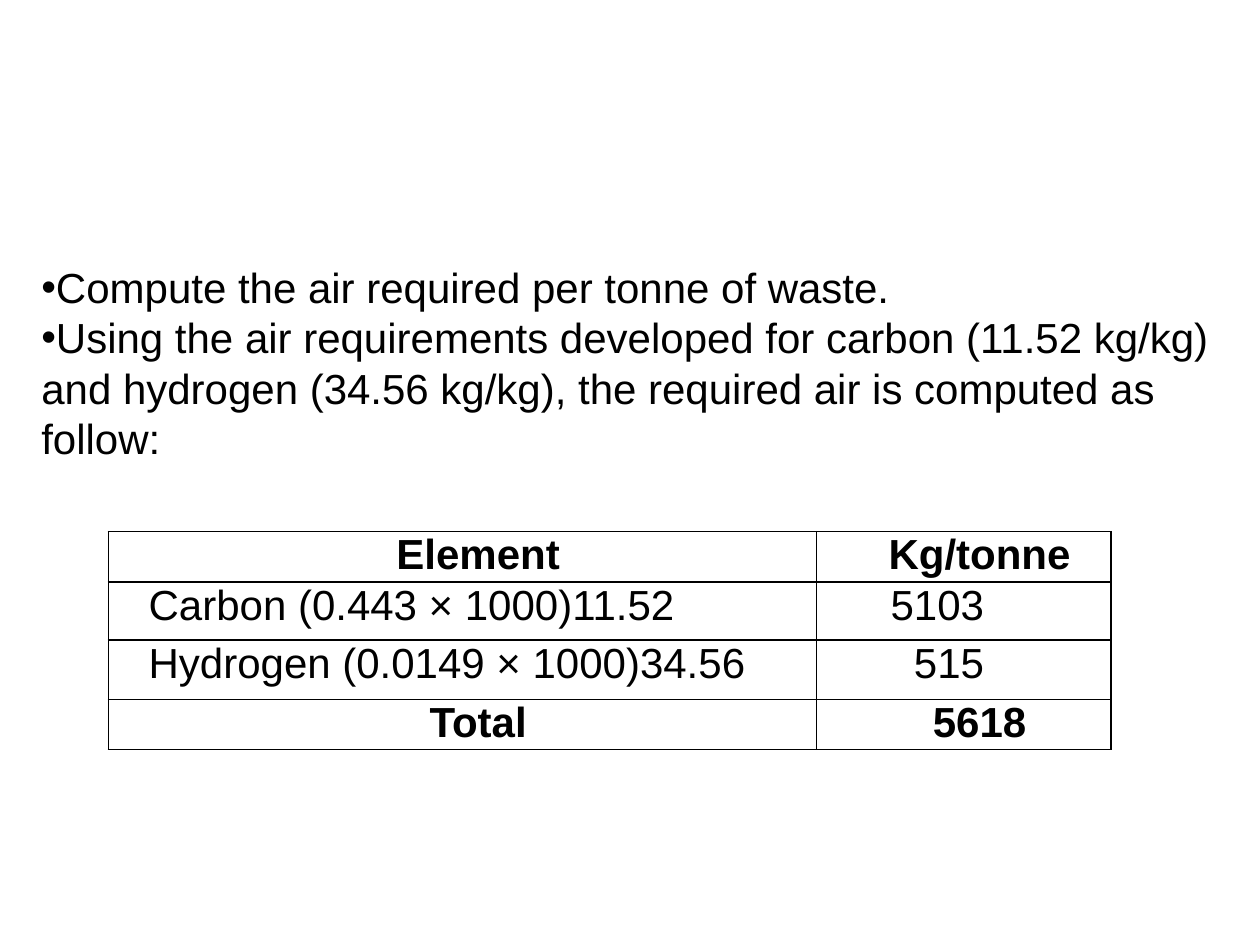
from lxml.etree import SubElement
from pptx import Presentation
from pptx.dml.color import RGBColor
from pptx.enum.text import MSO_ANCHOR, PP_ALIGN
from pptx.oxml.ns import qn
from pptx.util import Inches, Pt

COLORS = {"ink": "000000", "paper": "FFFFFF"}


def write(p, text, size=24, bold=False, align=PP_ALIGN.LEFT, indent=(0, 0), bullet=None):
    p.alignment = align
    pPr = p._p.get_or_add_pPr()
    pPr.set("marL", str(Inches(indent[0])))
    pPr.set("indent", str(Inches(indent[1])))
    if bullet:
        SubElement(pPr, qn("a:buFont"), typeface="Arial")
        SubElement(pPr, qn("a:buChar"), char=bullet)
    r = p.add_run()
    r.text = text
    r.font.name, r.font.size, r.font.bold = "Arial", Pt(size), bold
    r.font.color.rgb = RGBColor.from_string(COLORS["ink"])


class Slide:
    """Hold the style and the current slide; places are shares of its size."""

    def __init__(self, prs):
        self.w, self.h = prs.slide_width, prs.slide_height
        self.s = prs.slides.add_slide(prs.slide_layouts[6])
        fill = self.s.background.fill
        fill.solid()
        fill.fore_color.rgb = RGBColor.from_string(COLORS["paper"])

    def box(self, x, y, w, h):
        return int(x * self.w), int(y * self.h), int(w * self.w), int(h * self.h)

    def text(self, place, lines):
        tf = self.s.shapes.add_textbox(*self.box(*place)).text_frame
        tf.word_wrap = True
        for i, (line, bullet) in enumerate(lines):
            p = tf.add_paragraph() if i else tf.paragraphs[0]
            write(p, line, bullet=bullet)

    def border(self, cell, width=1):
        tcPr = cell._tc.get_or_add_tcPr()
        for i, side in enumerate("LRTB"):
            ln = SubElement(tcPr, qn(f"a:ln{side}"), w=str(Pt(width)))
            fill = SubElement(ln, qn("a:solidFill"))
            SubElement(fill, qn("a:srgbClr"), val=COLORS["ink"])
            tcPr.insert(i, ln)

    def table(self, place, cols, rows, data):
        sp = self.s.shapes.add_table(len(rows), len(cols), *self.box(*place))
        tbl = sp.table
        for col, width in zip(tbl.columns, cols):
            col.width = Inches(width)
        for i, (height, values) in enumerate(zip(rows, data)):
            tbl.rows[i].height = Inches(height)
            strong = i in (0, len(rows) - 1)
            for j, value in enumerate(values):
                number = j == 1 and not strong
                cell = tbl.cell(i, j)
                cell.fill.background()
                self.border(cell)
                cell.margin_top = cell.margin_bottom = 0
                cell.margin_left = Inches(0.07)
                cell.margin_right = Inches(1.01 if number else 0.07)
                cell.vertical_anchor = MSO_ANCHOR.TOP
                align = PP_ALIGN.CENTER if strong else PP_ALIGN.RIGHT if number else PP_ALIGN.LEFT
                write(cell.text_frame.paragraphs[0], value, bold=strong,
                      align=align, indent=(0.5, -0.25))


def main():
    prs = Presentation()
    prs.slide_width, prs.slide_height = Inches(10), Inches(7.5)
    s = Slide(prs)
    s.table((0.086, 0.5627, 0.797, 0.23), (5.62, 2.34), (0.4, 0.46, 0.47, 0.4), [
        ("Element", "Kg/tonne"),
        ("Carbon (0.443 × 1000)11.52", "5103"),
        ("Hydrogen (0.0149 × 1000)34.56", "515"),
        ("Total", "5618"),
    ])
    s.text((0.023, 0.27, 0.977, 0.28), [
        ("Compute the air required per tonne of waste.", "•"),
        ("Using the air requirements developed for carbon (11.52 kg/kg)", "•"),
        ("and hydrogen (34.56 kg/kg), the required air is computed as follow:", None),
    ])
    prs.save("out.pptx")


if __name__ == "__main__":
    main()
